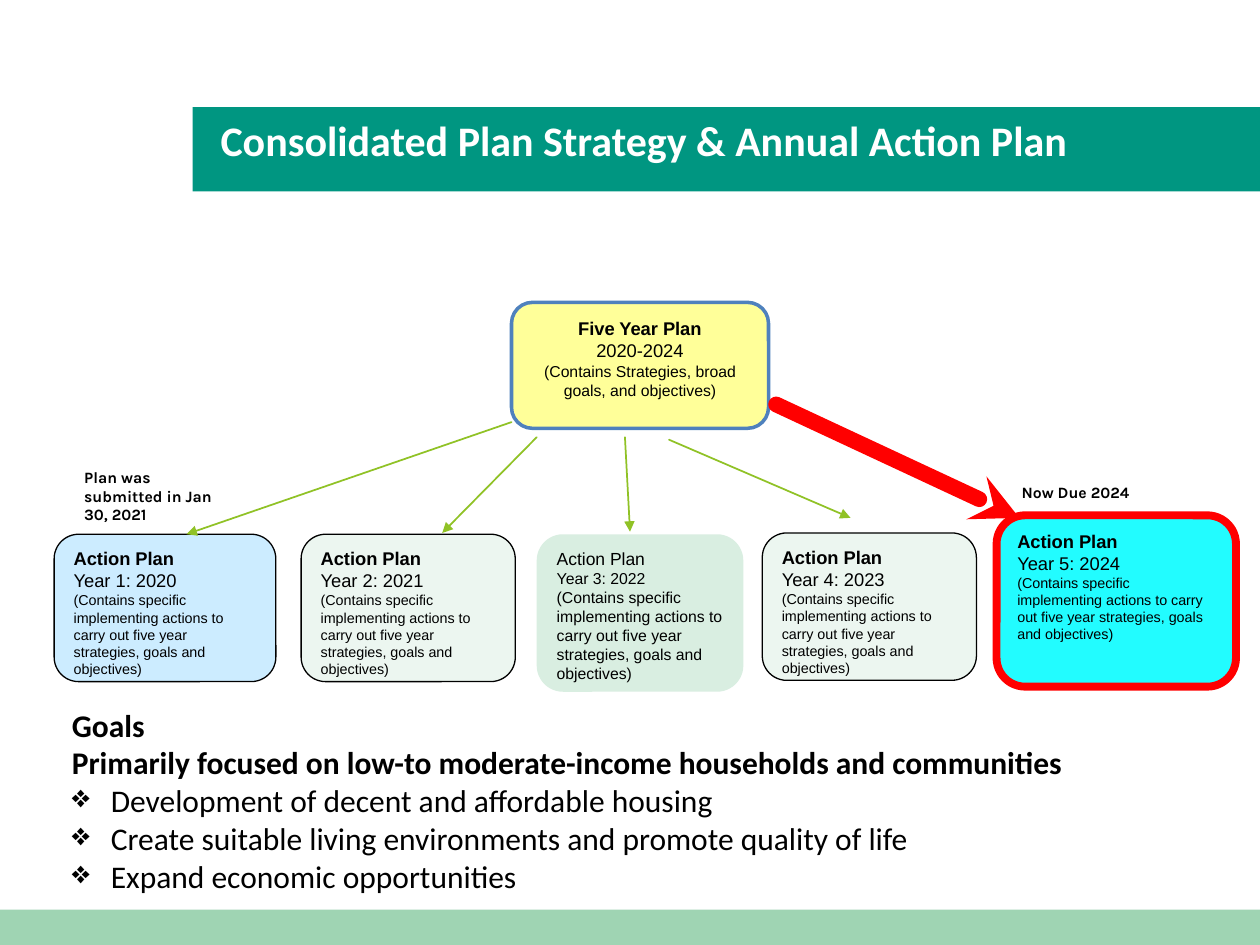
"""Build the consolidated plan slide."""
from dataclasses import dataclass

from pptx import Presentation
from pptx.dml.color import RGBColor
from pptx.enum.shapes import MSO_CONNECTOR, MSO_SHAPE
from pptx.enum.text import MSO_ANCHOR, PP_ALIGN
from pptx.oxml.ns import qn
from pptx.util import Inches, Pt
from lxml.etree import SubElement


@dataclass(frozen=True)
class Theme:
    """Colours, fonts and type sizes of the slide."""
    banner: str = "009681"
    footer: str = "9FD4B3"
    white: str = "FFFFFF"
    black: str = "000000"
    plan_fill: str = "FFFF99"
    plan_line: str = "4F81BD"
    first_year: str = "CCECFF"
    plain_year: str = "ECF6F0"
    middle_year: str = "D9EEE1"
    due_year: str = "22FCFF"
    arrow: str = "90C226"
    alert: str = "FF0000"
    heading_font: str = "Calibri"
    card_font: str = "Arial"
    note_font: str = "Karla"
    title_size: float = 24
    goal_size: float = 18
    card_size: float = 10.5
    middle_size: float = 10
    note_size: float = 9
    detail_size: float = 8.2


THEME = Theme()
CARD_DETAIL = ("(Contains specific implementing actions to carry out "
               "five year strategies, goals and objectives)")


def style(paragraph, text, font, size, bold=False, color=THEME.black):
    """Write text into a paragraph and set its font."""
    paragraph.text = text
    paragraph.font.name = font
    paragraph.font.size = Pt(size)
    paragraph.font.bold = bold
    paragraph.font.color.rgb = RGBColor.from_string(color)


def add_panel(slide, box, kind, fill, line=None, width=0):
    """Add a filled preset shape with an optional outline."""
    panel = slide.shapes.add_shape(kind, *map(Inches, box))
    panel.shadow.inherit = False
    panel.fill.solid()
    panel.fill.fore_color.rgb = RGBColor.from_string(fill)
    if line:
        panel.line.color.rgb = RGBColor.from_string(line)
        panel.line.width = Pt(width)
    else:
        panel.line.fill.background()
    return panel


def add_text_frame(slide, box, inset=None):
    """Add a wrapping text box and return its frame."""
    frame = slide.shapes.add_textbox(*map(Inches, box)).text_frame
    frame.word_wrap = True
    if inset is not None:
        frame.margin_left = frame.margin_right = Inches(inset)
        frame.margin_top = frame.margin_bottom = Inches(inset)
    return frame


def add_card(slide, box, lines, fill, line=None, width=0.75, align=PP_ALIGN.LEFT):
    """Add a rounded card holding (text, size, bold) lines."""
    frame = add_panel(slide, box, MSO_SHAPE.ROUNDED_RECTANGLE, fill, line, width).text_frame
    frame.word_wrap = True
    frame.vertical_anchor = MSO_ANCHOR.TOP
    for index, (text, size, bold) in enumerate(lines):
        paragraph = frame.add_paragraph() if index else frame.paragraphs[0]
        paragraph.alignment = align
        style(paragraph, text, THEME.card_font, size, bold)
    return frame


def add_arrow(slide, start, end, color=THEME.arrow, width=1, head="triangle"):
    """Add a straight round-capped arrow between two points."""
    arrow = slide.shapes.add_connector(
        MSO_CONNECTOR.STRAIGHT, *map(Inches, (*start, *end)))
    arrow.line.color.rgb = RGBColor.from_string(color)
    arrow.line.width = Pt(width)
    outline = arrow.line._get_or_add_ln()
    outline.set("cap", "rnd")
    SubElement(outline, qn("a:tailEnd"), type=head)
    SubElement(arrow._element.spPr, qn("a:effectLst"))


def add_banner(slide, box):
    """Add the title banner."""
    left, top, width, height = box
    add_panel(slide, box, MSO_SHAPE.RECTANGLE, THEME.banner)
    frame = add_text_frame(slide, (left + 0.22, top + 0.13, width - 0.22, 0.32), 0)
    title = frame.paragraphs[0]
    title.line_spacing = Pt(23.5)
    style(title, "Consolidated Plan Strategy & Annual Action Plan",
          THEME.heading_font, THEME.title_size, True, THEME.white)


def add_five_year_plan(slide, box):
    """Add the five year plan card."""
    lines = [("Five Year Plan", THEME.card_size, True),
             ("2020-2024", THEME.card_size, False),
             ("(Contains Strategies, broad goals, and objectives)", THEME.note_size, False)]
    frame = add_card(slide, box, lines, THEME.plan_fill, THEME.plan_line, 2, PP_ALIGN.CENTER)
    frame.margin_left = frame.margin_right = frame.margin_top = Inches(0.07)
    frame.margin_bottom = Inches(0.04)


def add_action_plan(slide, box, year, fill, line=THEME.black, width=0.75, emphasis=True):
    """Add the card of one action plan year."""
    heading, period, detail = (
        (THEME.card_size, THEME.card_size, THEME.detail_size) if emphasis
        else (THEME.middle_size, THEME.note_size, THEME.note_size))
    lines = [("Action Plan", heading, emphasis),
             (f"Year {year}: {2019 + year}", period, False),
             (CARD_DETAIL, detail, False)]
    add_card(slide, box, lines, fill, line, width)


def add_note(slide, box, text):
    """Add a short bold note above a card."""
    frame = add_text_frame(slide, box)
    style(frame.paragraphs[0], text, THEME.note_font, THEME.note_size, True)


def add_goals(slide, box):
    """Add the goals heading, its focus and the bulleted goals."""
    frame = add_text_frame(slide, box, 0)
    goals = [("Goals", False),
             ("Primarily focused on low-to moderate-income households and communities", False),
             ("Development of decent and affordable housing", True),
             ("Create suitable living environments and promote quality of life", True),
             ("Expand economic opportunities", True)]
    for index, (text, bulleted) in enumerate(goals):
        paragraph = frame.add_paragraph() if index else frame.paragraphs[0]
        if bulleted:
            properties = paragraph._p.get_or_add_pPr()
            properties.set("marL", str(Inches(0.31)))
            properties.set("indent", str(-Inches(0.31)))
            SubElement(properties, qn("a:buChar"), char="❖")
        style(paragraph, text, THEME.heading_font, THEME.goal_size, not bulleted)


def main():
    """Compose the slide and save it."""
    deck = Presentation()
    deck.slide_width, deck.slide_height = Inches(10), Inches(7.5)
    slide = deck.slides.add_slide(deck.slide_layouts[6])
    add_banner(slide, (1.53, 0.85, 8.47, 0.67))
    add_panel(slide, (0, 7.22, 10, 0.28), MSO_SHAPE.RECTANGLE, THEME.footer)
    add_five_year_plan(slide, (4.06, 2.4, 2.04, 1))
    add_action_plan(slide, (0.43, 4.24, 1.76, 1.17), 1, THEME.first_year)
    add_action_plan(slide, (2.39, 4.24, 1.7, 1.17), 2, THEME.plain_year)
    add_action_plan(slide, (4.26, 4.24, 1.64, 1.25), 3, THEME.middle_year,
                    line=None, emphasis=False)
    add_action_plan(slide, (6.05, 4.23, 1.7, 1.17), 4, THEME.plain_year)
    for start, end in (((4.06, 3.35), (1.48, 4.24)), ((4.26, 3.47), (3.51, 4.23)),
                       ((4.96, 3.47), (5, 4.22)), ((5.31, 3.49), (6.75, 4.11))):
        add_arrow(slide, start, end)
    add_arrow(slide, (6.16, 3.21), (8.09, 4.11), THEME.alert, 9, "stealth")
    add_note(slide, (0.57, 3.66, 1.23, 0.56), "Plan was submitted in Jan 30, 2021")
    add_note(slide, (8.01, 3.78, 1.23, 0.25), "Now Due 2024")
    add_goals(slide, (0.57, 5.6, 8.87, 1.51))
    add_action_plan(slide, (7.91, 4.09, 1.9, 1.36), 5, THEME.due_year, THEME.alert, 4.5)
    deck.save("out.pptx")


if __name__ == "__main__":
    main()
